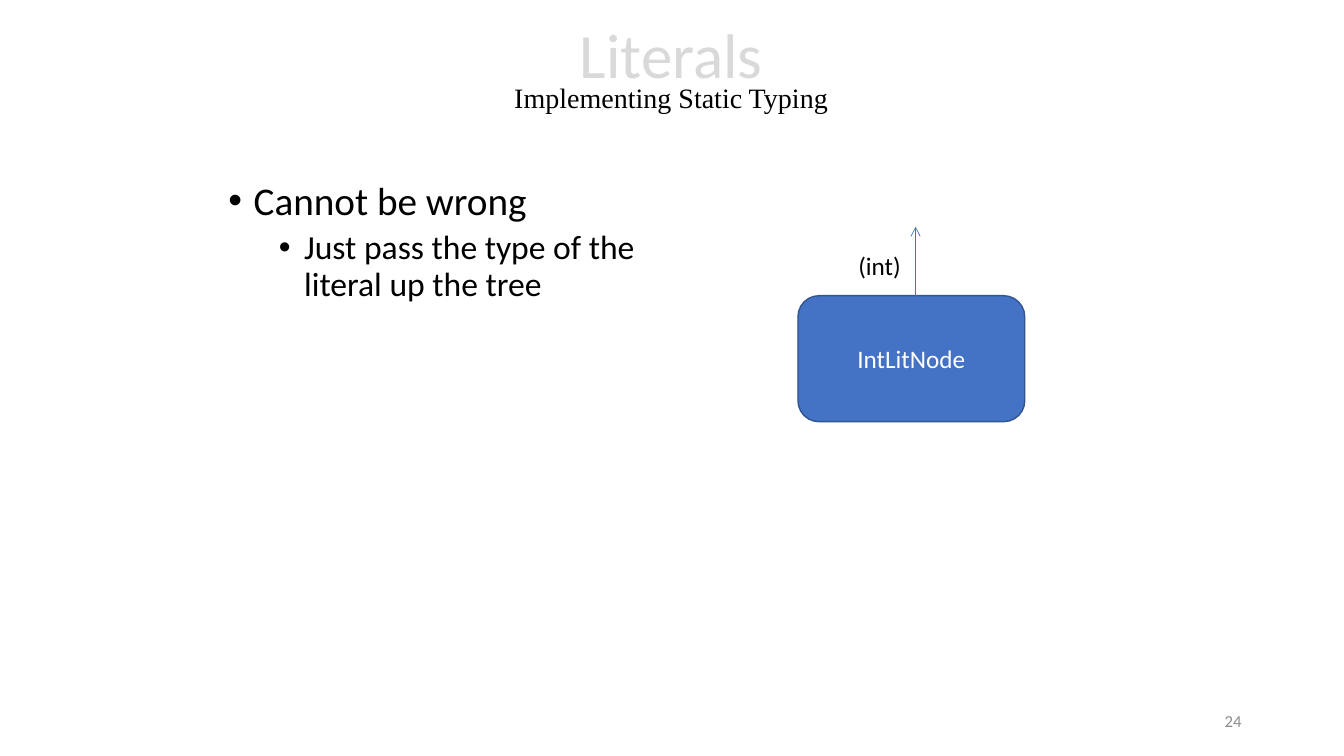
from pptx import Presentation
from pptx.dml.color import RGBColor as Rgb
from pptx.enum.shapes import MSO_CONNECTOR as Link, MSO_SHAPE as Form
from pptx.enum.text import MSO_ANCHOR as Anchor, MSO_AUTO_SIZE as Fit, PP_ALIGN as Align
from pptx.oxml.ns import qn
from pptx.util import Inches, Pt
from lxml.etree import SubElement as Sub

COLS, ROWS = 160, 90


def paint(text):
    return Rgb.from_string(text)


class Board:
    face = "Calibri"
    ink = "000000"
    blue = "4472C4"

    def __init__(self):
        self.deck = Presentation()
        self.deck.slide_width = Inches(13.33)
        self.deck.slide_height = Inches(7.5)
        self.slide = self.deck.slides.add_slide(self.deck.slide_layouts[1])

    def grid(self, x, y):
        return (round(self.deck.slide_width * x / COLS),
                round(self.deck.slide_height * y / ROWS))

    def place(self, shape, x, y, w, h):
        shape.left, shape.top = self.grid(x, y)
        shape.width, shape.height = self.grid(w, h)

    def style(self, font, size, color=ink, face=face):
        font.size, font.name = Pt(size), face
        font.color.rgb = paint(color)

    def title(self, box, lines):
        shape = self.slide.shapes.title
        self.place(shape, *box)
        frame = shape.text_frame
        frame.auto_size = Fit.NONE
        frame.vertical_anchor = Anchor.MIDDLE
        para = frame.paragraphs[0]
        para.alignment, para.line_spacing = Align.CENTER, 0.7
        for i, (text, *look) in enumerate(lines):
            if i:
                para.add_line_break()
            run = para.add_run()
            run.text = text
            self.style(run.font, *look)

    def body(self, box, items):
        shape = self.slide.placeholders[1]
        self.place(shape, *box)
        frame = shape.text_frame
        frame.auto_size = Fit.NONE
        for i, (text, level, size, gap) in enumerate(items):
            para = frame.add_paragraph() if i else frame.paragraphs[0]
            para.text, para.level = text, level
            para.line_spacing, para.space_before = 0.9, Pt(gap)
            props = para._p.get_or_add_pPr()
            props.set("marL", str(Inches(0.25 + level / 2)))
            props.set("indent", str(Inches(-0.25)))
            Sub(props, qn("a:buFont")).set("typeface", "Arial")
            Sub(props, qn("a:buChar")).set("char", "•")
            self.style(para.font, size)

    def fill(self, frame, text, align, size, color):
        para = frame.paragraphs[0]
        para.text, para.alignment = text, align
        self.style(para.font, size, color)

    def label(self, box, text, size, align=Align.LEFT, color=ink,
              anchor=Anchor.TOP, wrap=True):
        shape = self.slide.shapes.add_textbox(*self.grid(*box[:2]), *self.grid(*box[2:]))
        frame = shape.text_frame
        frame.word_wrap, frame.vertical_anchor = wrap, anchor
        self.fill(frame, text, align, size, color)

    def node(self, box, text):
        shape = self.slide.shapes.add_shape(
            Form.ROUNDED_RECTANGLE, *self.grid(*box[:2]), *self.grid(*box[2:]))
        shape.shadow.inherit = False
        shape.fill.solid()
        shape.fill.fore_color.rgb = paint(self.blue)
        shape.line.color.rgb = paint("325491")
        shape.line.width = Pt(1)
        shape.text_frame.vertical_anchor = Anchor.MIDDLE
        self.fill(shape.text_frame, text, Align.CENTER, 18, "FFFFFF")

    def arrow(self, start, end):
        line = self.slide.shapes.add_connector(
            Link.STRAIGHT, *self.grid(*start), *self.grid(*end))
        line.line.color.rgb = paint(self.blue)
        line.line.width = Pt(0.5)
        props = line._element.spPr
        Sub(props.find(qn("a:ln")), qn("a:tailEnd")).set("type", "arrow")
        Sub(props, qn("a:effectLst"))


def main():
    board = Board()
    board.title((28.2, 0.2, 103.4, 17.4), [
        ("Literals", 45, "D9D9D9"),
        ("Implementing Static Typing", 20, board.ink, "Times New Roman")])
    board.body((26, 21, 52, 59.4), [
        ("Cannot be wrong", 0, 28, 10),
        ("Just pass the type of the literal up the tree", 1, 24, 5)])
    board.label((113, 83.4, 36, 4.8), "24", 12, Align.RIGHT, "8C8C8C", Anchor.MIDDLE)
    board.node((95, 35.2, 27, 15), "IntLitNode")
    board.arrow((109, 35.2), (109, 27))
    board.label((101, 29.2, 7.6, 4.8), "(int)", 18, wrap=False)
    board.deck.save("out.pptx")


if __name__ == "__main__":
    main()
